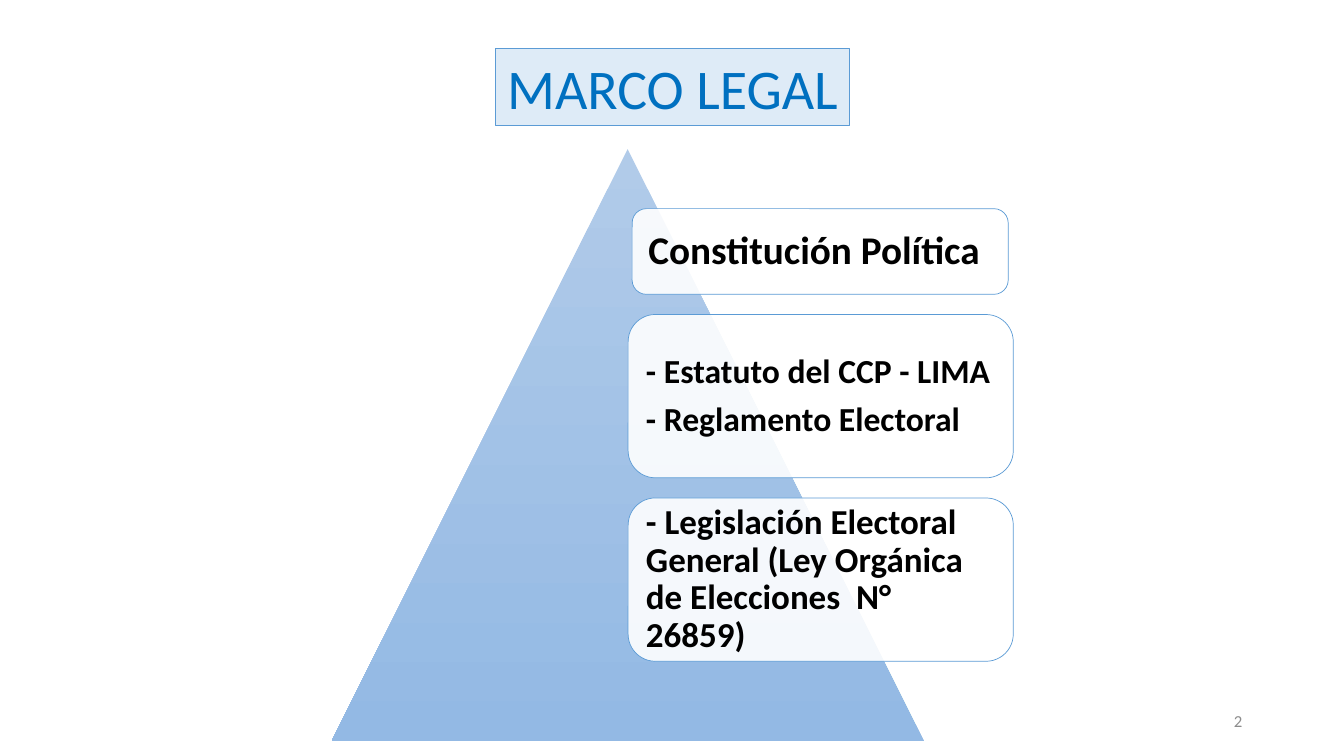
from lxml import etree
from pptx import Presentation
from pptx.dml.color import RGBColor
from pptx.enum.shapes import MSO_SHAPE
from pptx.enum.text import MSO_ANCHOR, PP_ALIGN
from pptx.oxml.ns import qn
from pptx.util import Inches, Pt

TRIANGLE = MSO_SHAPE.ISOSCELES_TRIANGLE
RECTANGLE = MSO_SHAPE.RECTANGLE
ROUNDED = MSO_SHAPE.ROUNDED_RECTANGLE
MIDDLE = MSO_ANCHOR.MIDDLE
LEFT, CENTER, RIGHT, JUSTIFY = PP_ALIGN.LEFT, PP_ALIGN.CENTER, PP_ALIGN.RIGHT, PP_ALIGN.JUSTIFY

FONT = "Calibri"
COLORS = {
    "pyramid_top": "B1CBE9",
    "pyramid_bottom": "93B9E4",
    "border": "5B9BD5",
    "card": "FFFFFF",
    "card_text": "000000",
    "title_fill": "DEEBF7",
    "title_text": "0070C0",
    "number": "8C8C8C",
}
CARDS = [
    ((2.98, 0.59, 3.73, 0.85), ["Constitución Política"], 28, JUSTIFY, 0.12),
    ((2.94, 1.64, 3.82, 1.62),
     ["- Estatuto del CCP - LIMA", "- Reglamento Electoral"], 24, LEFT, 0.1),
    ((2.94, 3.46, 3.82, 1.62),
     ["- Legislación Electoral General (Ley Orgánica de Elecciones  N° 26859)"], 25, LEFT, 0.1),
]


def color(name):
    return RGBColor.from_string(COLORS[name])


def add_box(slide, kind, box, fill=None, line_width=None):
    shape = slide.shapes.add_shape(kind, *[Inches(length) for length in box])
    shape.shadow.inherit = False
    if fill:
        shape.fill.solid()
        shape.fill.fore_color.rgb = color(fill)
    if line_width:
        shape.line.color.rgb = color("border")
        shape.line.width = Pt(line_width)
    else:
        shape.line.fill.background()
    return shape


def write_lines(text_frame, lines, size, color_name, alignment, bold=False):
    text_frame.vertical_anchor = MIDDLE
    text_frame.text = "\n".join(lines)
    for paragraph in text_frame.paragraphs:
        paragraph.alignment = alignment
        for run in paragraph.runs:
            run.font.name = FONT
            run.font.size = Pt(size)
            run.font.bold = bold
            run.font.color.rgb = color(color_name)


def set_opacity(shape, percent):
    fill_color = shape.fill._xPr.find(qn("a:solidFill"))[0]
    etree.SubElement(fill_color, qn("a:alpha")).set("val", str(percent * 1000))


def add_card(slide, box, lines, size, alignment, inset):
    card = add_box(slide, ROUNDED, box, "card", 0.5)
    set_opacity(card, 90)
    text_frame = card.text_frame
    text_frame.word_wrap = True
    text_frame.margin_left = text_frame.margin_right = Inches(inset)
    text_frame.margin_top = text_frame.margin_bottom = Inches(inset)
    write_lines(text_frame, lines, size, "card_text", alignment, True)
    for paragraph in text_frame.paragraphs:
        paragraph.line_spacing = 0.9
        paragraph.space_after = Pt(round(size * 0.35, 1))


def add_legal_pyramid(slide, left, top, side):
    pyramid = add_box(slide, TRIANGLE, (left, top, side, side))
    pyramid.fill.gradient()
    pyramid.fill.gradient_angle = 270
    for stop, name in zip(pyramid.fill.gradient_stops, ("pyramid_top", "pyramid_bottom")):
        stop.color.rgb = color(name)
    for (offset_x, offset_y, width, height), *content in CARDS:
        add_card(slide, (left + offset_x, top + offset_y, width, height), *content)


def add_title(slide, box):
    title = add_box(slide, RECTANGLE, box, "title_fill", 0.75)
    title.text_frame.word_wrap = False
    write_lines(title.text_frame, ["MARCO LEGAL"], 40, "title_text", CENTER)


def add_slide_number(slide, box):
    number = slide.shapes.add_textbox(*[Inches(length) for length in box])
    number.text_frame.word_wrap = True
    write_lines(number.text_frame, ["2"], 12, "number", RIGHT)


def main():
    presentation = Presentation()
    presentation.slide_width = Inches(13.33)
    presentation.slide_height = Inches(7.5)
    slide = presentation.slides.add_slide(presentation.slide_layouts[6])
    add_legal_pyramid(slide, 3.29, 1.48, 5.87)
    add_title(slide, (4.91, 0.48, 3.52, 0.77))
    add_slide_number(slide, (9.42, 6.95, 3, 0.4))
    presentation.save("out.pptx")


if __name__ == "__main__":
    main()
